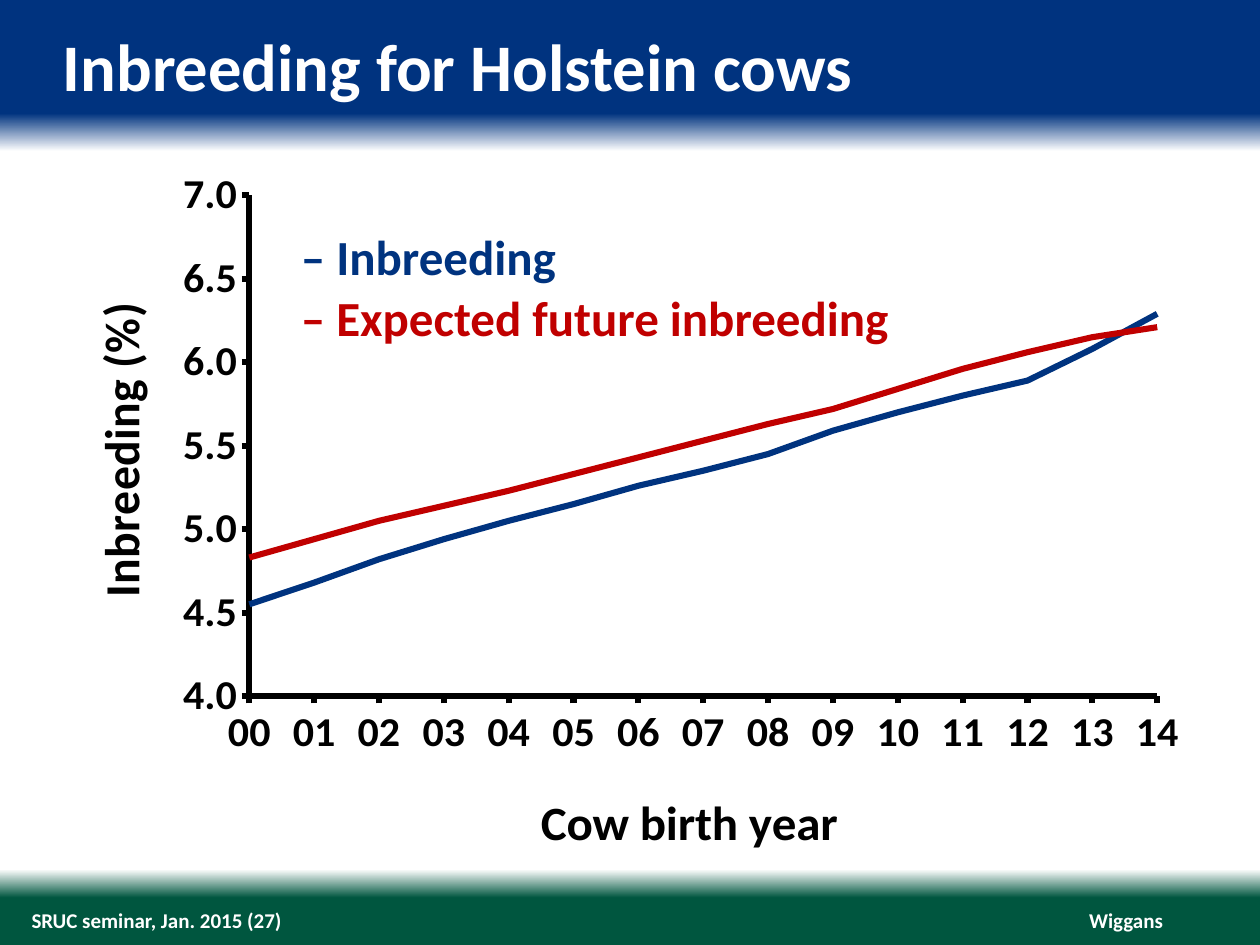
import pptx
import pptx.chart.data
import pptx.dml.color
import pptx.enum.chart
import pptx.enum.text
import pptx.oxml
import pptx.oxml.ns
import pptx.util

RGBColor = pptx.dml.color.RGBColor
Pt = pptx.util.Pt
qn = pptx.oxml.ns.qn
PP_ALIGN = pptx.enum.text.PP_ALIGN
MSO_ANCHOR = pptx.enum.text.MSO_ANCHOR
XL = pptx.enum.chart

NAVY = RGBColor(0x00, 0x33, 0x7F)
GREEN = RGBColor(0x00, 0x56, 0x3F)
RED = RGBColor(0xC0, 0x00, 0x00)
WHITE = RGBColor(0xFF, 0xFF, 0xFF)
BLACK = RGBColor(0x00, 0x00, 0x00)

YEARS = [f"{year:02d}" for year in range(15)]
SERIES = [
    ("Inbreeding", NAVY, [4.55, 4.68, 4.82, 4.94, 5.05, 5.15, 5.26, 5.35,
                          5.45, 5.59, 5.7, 5.8, 5.89, 6.08, 6.29]),
    ("Expected future inbreeding", RED, [4.83, 4.94, 5.05, 5.14, 5.23, 5.33, 5.43, 5.53,
                                         5.63, 5.72, 5.84, 5.96, 6.06, 6.15, 6.21]),
]
BANDS = [(0, NAVY), (12, NAVY), (16, WHITE), (92, WHITE), (95, GREEN), (100, GREEN)]


class SlideBuilder:
    font = "Calibri"
    line_width = Pt(3.5)
    columns, rows = 10, 7.5

    def __init__(self, prs):
        self.prs = prs
        self.s = prs.slides.add_slide(prs.slide_layouts[6])

    def box(self, col, row, cols, rows):
        x, y = self.prs.slide_width / self.columns, self.prs.slide_height / self.rows
        return int(col * x), int(row * y), int(cols * x), int(rows * y)

    def style(self, font, size, color):
        font.name, font.size, font.bold = self.font, Pt(size), True
        font.color.rgb = color

    def background(self, bands):
        fill = self.s.background.fill
        fill.gradient()
        fill.gradient_angle = 270
        stops = self.s.background._cSld.find(".//" + qn("a:gsLst"))
        for stop in list(stops):
            stops.remove(stop)
        for share, color in bands:
            stop = pptx.oxml.parse_xml(
                f'<a:gs {pptx.oxml.ns.nsdecls("a")} pos="{share * 1000}">'
                f'<a:srgbClr val="{color}"/></a:gs>')
            stops.append(stop)

    def text(self, text, area, size, color, align=PP_ALIGN.LEFT,
             anchor=MSO_ANCHOR.TOP, inset=0, wrap=True):
        tf = self.s.shapes.add_textbox(*self.box(*area)).text_frame
        tf.word_wrap, tf.vertical_anchor = wrap, anchor
        tf.margin_left = tf.margin_right = pptx.util.Inches(inset)
        tf.margin_top = tf.margin_bottom = pptx.util.Inches(inset / 2)
        tf.text = text
        p = tf.paragraphs[0]
        p.alignment = align
        self.style(p.runs[0].font, size, color)

    def place(self, parent, index, **layout):
        old = parent.find(qn("c:layout"))
        if old is not None:
            parent.remove(old)
        values = "".join(f'<c:{key} val="{value}"/>' for key, value in layout.items())
        parent.insert(index, pptx.oxml.parse_xml(
            f'<c:layout {pptx.oxml.ns.nsdecls("c")}><c:manualLayout>{values}'
            '</c:manualLayout></c:layout>'))

    def axis(self, axis, title, x, y):
        axis.has_major_gridlines = False
        axis.major_tick_mark = XL.XL_TICK_MARK.OUTSIDE
        axis.minor_tick_mark = XL.XL_TICK_MARK.NONE
        axis.format.line.color.rgb = BLACK
        axis.format.line.width = self.line_width
        self.style(axis.tick_labels.font, 24, BLACK)
        tf = axis.axis_title.text_frame
        tf.text = title
        self.style(tf.paragraphs[0].runs[0].font, 28, BLACK)
        self.place(axis.axis_title._element, 1, xMode="edge", yMode="edge", x=x, y=y)

    def line_chart(self, area, categories, series):
        data = pptx.chart.data.CategoryChartData(number_format="#,##0.0")
        data.categories = categories
        for name, _, values in series:
            data.add_series(name, values)
        chart = self.s.shapes.add_chart(
            XL.XL_CHART_TYPE.LINE, *self.box(*area), data).chart
        chart.has_title = chart.has_legend = False
        chart.font.name, chart.font.size = self.font, Pt(18)
        chart.plots[0].vary_by_categories = False
        for line, (_, color, _) in zip(chart.plots[0].series, series):
            line.smooth = False
            line.format.line.color.rgb = color
            line.format.line.width = self.line_width
        self.axis(chart.category_axis, "Cow birth year", 0.41, 0.91)
        values = chart.value_axis
        self.axis(values, "Inbreeding (%)", 0.03, 0.26)
        values.minimum_scale, values.maximum_scale, values.major_unit = 4, 7, 0.5
        values.tick_labels.number_format = "#,##0.0"
        values.tick_labels.number_format_is_linked = False
        between = values._element.find(qn("c:crossBetween"))
        if between is None:
            between = pptx.oxml.parse_xml(
                f'<c:crossBetween {pptx.oxml.ns.nsdecls("c")} val="midCat"/>')
            values._element.find(qn("c:majorUnit")).addprevious(between)
        between.set("val", "midCat")
        self.place(chart._chartSpace.find(".//" + qn("c:plotArea")), 0,
                   layoutTarget="inner", xMode="edge", yMode="edge",
                   x=0.173, y=0.116, w=0.761, h=0.678)


def main():
    prs = pptx.Presentation()
    prs.slide_width, prs.slide_height = pptx.util.Inches(10), pptx.util.Inches(7.5)
    slide = SlideBuilder(prs)
    slide.background(BANDS)
    slide.text("Wiggans", (8.64, 7.2, 0.59, 0.2), 12, WHITE,
               PP_ALIGN.RIGHT, MSO_ANCHOR.MIDDLE, wrap=False)
    slide.text("SRUC seminar, Jan. 2015 (27)", (0.25, 7.2, 7.42, 0.2), 12, WHITE,
               anchor=MSO_ANCHOR.MIDDLE)
    slide.line_chart((0.34, 0.87, 9.47, 6.02), YEARS, SERIES)
    slide.text("Inbreeding for Holstein cows", (0.5, 0.2, 9, 0.64), 38, WHITE)
    for i, (name, color, _) in enumerate(SERIES):
        slide.text(f"– {name}", (2.29, 1.75 + 0.48 * i, 4.97, 0.57), 28, color, inset=0.1)
    prs.save("out.pptx")


if __name__ == "__main__":
    main()
